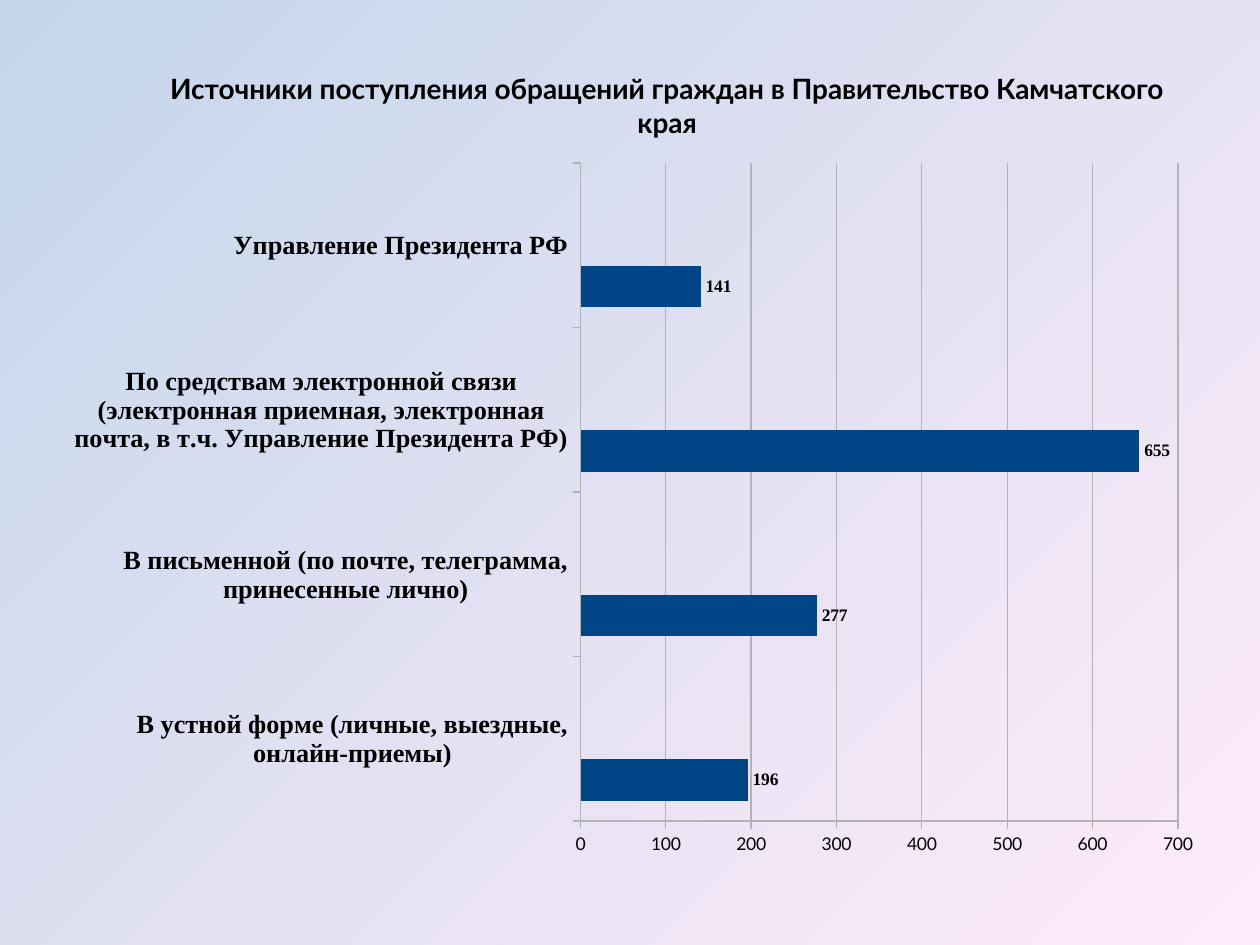
import pptx
import pptx.chart.data
import pptx.dml.color
import pptx.enum.chart
import pptx.enum.text
import pptx.oxml
import pptx.oxml.ns
import pptx.util

Pt = pptx.util.Pt
chart_enums = pptx.enum.chart

HEADING = "Источники поступления обращений граждан в Правительство Камчатского края"
APPEALS = [
    ("В устной форме (личные, выездные, онлайн-приемы)", 196),
    ("В письменной (по почте, телеграмма, принесенные лично)", 277),
    ("По средствам электронной связи (электронная приемная, электронная почта, "
     "в т.ч. Управление Президента РФ)", 655),
    ("Управление Президента РФ", 141),
]
SERIES_COLORS = ["004586", "FF420E", "FFD320"]  # only the first series holds values
BACKGROUND = ["C4D6EB", "FFEBFA"]
GRID_COLOR = "B3B3B3"
PLOT_AREA = {"x": 0.444, "y": 0.02, "w": 0.524, "h": 0.915}


def rgb(code):
    return pptx.dml.color.RGBColor.from_string(code)


def assign(target, **values):
    for key, value in values.items():
        setattr(target, key, value)


def style_font(font, name, size, bold=False):
    assign(font, name=name, size=Pt(size), bold=bold)
    font.color.rgb = rgb("000000")


def style_line(line):
    line.color.rgb = rgb(GRID_COLOR)
    line.width = Pt(0)


def chart_xml(body):
    namespaces = pptx.oxml.ns.nsdecls("c", "a")
    tag, rest = body.split(">", 1)
    return pptx.oxml.parse_xml(f"{tag} {namespaces}>{rest}")


def place_plot(chart):
    """Fix the inner plot area and leave the chart unfilled."""
    space = chart.element
    plot_area = space.chart.plotArea
    for layout in plot_area.findall(pptx.oxml.ns.qn("c:layout")):
        plot_area.remove(layout)
    modes = '<c:xMode val="edge"/><c:yMode val="edge"/>'
    sizes = "".join(f'<c:{key} val="{value}"/>' for key, value in PLOT_AREA.items())
    plot_area.insert(0, chart_xml(
        '<c:layout><c:manualLayout><c:layoutTarget val="inner"/>'
        f"{modes}{sizes}</c:manualLayout></c:layout>"))
    unfilled = "<c:spPr><a:noFill/><a:ln><a:noFill/></a:ln></c:spPr>"
    plot_area.append(chart_xml(unfilled))
    space.chart.addnext(chart_xml(unfilled))


def add_heading(slide):
    box = slide.shapes.add_textbox(Pt(82), Pt(37.5), Pt(598.5), Pt(26))
    frame = box.text_frame
    assign(frame, word_wrap=True, auto_size=pptx.enum.text.MSO_AUTO_SIZE.SHAPE_TO_FIT_TEXT)
    paragraph = frame.paragraphs[0]
    paragraph.alignment = pptx.enum.text.PP_ALIGN.CENTER
    heading = paragraph.add_run()
    heading.text = HEADING
    style_font(heading.font, "Lato", 16, bold=True)


def add_appeals_chart(slide):
    sources, counts = zip(*APPEALS)
    data = pptx.chart.data.CategoryChartData()
    data.categories = sources
    for number in range(len(SERIES_COLORS)):
        values = counts if number == 0 else [None] * len(counts)
        data.add_series(f"Series {number + 1}", values)
    chart = slide.shapes.add_chart(
        chart_enums.XL_CHART_TYPE.BAR_CLUSTERED,
        Pt(42.5), Pt(85), Pt(651.5), Pt(411), data).chart
    assign(chart, has_title=False, has_legend=False)
    style_font(chart.font, "Arial", 10)

    bars = chart.plots[0]
    assign(bars, gap_width=100, overlap=0, vary_by_categories=False)
    for series, color in zip(bars.series, SERIES_COLORS):
        series.format.fill.solid()
        series.format.fill.fore_color.rgb = rgb(color)
    labels = bars.series[0].data_labels
    assign(labels, show_value=True, number_format="General", number_format_is_linked=False,
           position=chart_enums.XL_LABEL_POSITION.OUTSIDE_END)
    style_font(labels.font, "Times New Roman", 10, bold=True)

    source_axis, count_axis = chart.category_axis, chart.value_axis
    style_font(source_axis.tick_labels.font, "Times New Roman", 15, bold=True)
    style_font(count_axis.tick_labels.font, "Lato", 10)
    for axis in (source_axis, count_axis):
        axis.major_tick_mark = chart_enums.XL_TICK_MARK.OUTSIDE
        axis.minor_tick_mark = chart_enums.XL_TICK_MARK.NONE
        style_line(axis.format.line)
    source_axis.has_major_gridlines = False
    assign(count_axis, minimum_scale=0, maximum_scale=700, major_unit=100,
           has_major_gridlines=True)
    style_line(count_axis.major_gridlines.format.line)
    place_plot(chart)


def main():
    deck = pptx.Presentation()
    assign(deck, slide_width=Pt(720), slide_height=Pt(540))
    slide = deck.slides.add_slide(deck.slide_layouts[6])
    fill = slide.background.fill
    fill.gradient()
    fill.gradient_angle = 315
    for stop, color in zip(fill.gradient_stops, BACKGROUND):
        stop.color.rgb = rgb(color)
    add_heading(slide)
    add_appeals_chart(slide)
    deck.save("out.pptx")


if __name__ == "__main__":
    main()
